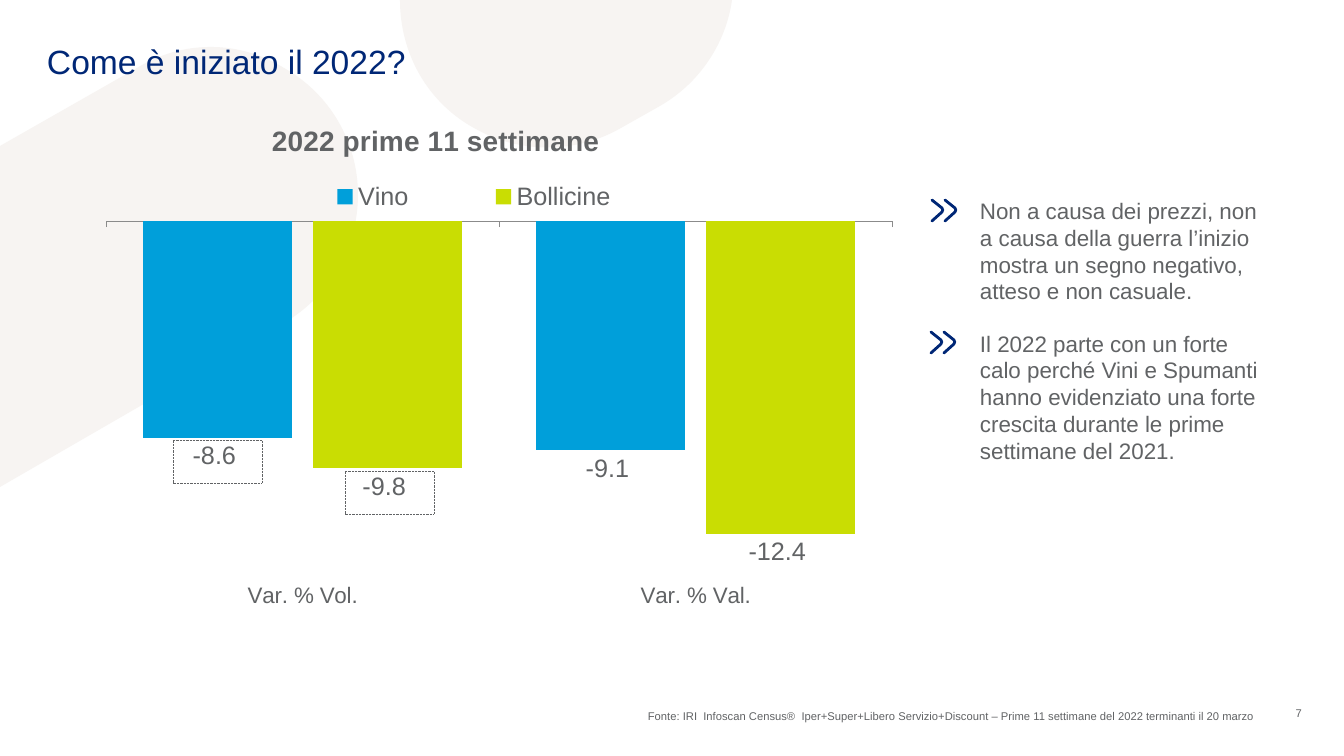
"""Build the slide on how 2022 began for wine and sparkling wine sales."""
import dataclasses

import pptx
import pptx.chart.data
import pptx.dml.color
import pptx.enum.chart
import pptx.enum.dml
import pptx.enum.shapes
import pptx.enum.text
import pptx.oxml
import pptx.oxml.ns
import pptx.util


@dataclasses.dataclass(frozen=True)
class Theme:
    font: str = "Arial"
    navy: str = "002776"
    grey: str = "616365"
    axis: str = "8B8B8B"
    sand: str = "F7F4F2"
    heading: int = 24
    chart_heading: int = 20
    values: int = 18
    body: int = 16
    small: int = 8


THEME = Theme()
HEADING = "Come è iniziato il 2022?"
COMMENTS = [
    "Non a causa dei prezzi, non a causa della guerra l’inizio mostra un segno negativo, "
    "atteso e non casuale.",
    "Il 2022 parte con un forte calo perché Vini e Spumanti hanno evidenziato una forte "
    "crescita durante le prime settimane del 2021.",
]
SOURCE = ("Fonte: IRI  Infoscan Census®  Iper+Super+Libero Servizio+Discount – "
          "Prime 11 settimane del 2022 terminanti il 20 marzo")
PAGE = "7"
CHART_HEADING = "2022 prime 11 settimane"
MEASURES = ["Var. % Vol.", "Var. % Val."]
SALES = [("Vino", (-8.6, -9.1), "009FDA"), ("Bollicine", (-9.8, -12.4), "C9DD03")]
VALUE_FORMAT = "#,##0.0_ ;[Red]\\-#,##0.0\\ "

BLOBS = [
    [(211, 47), (236, 47, 261, 54, 284, 68), (330, 94, 358, 142, 358, 195),
     (358, 247, 330, 296, 284, 323), (0, 487), (0, 146), (137, 68),
     (160, 54, 185, 47, 211, 47)],
    [(400, 0), (732, 0), (726, 43, 700, 83, 660, 106), (621, 128),
     (576, 154, 519, 154, 474, 128), (427, 102, 400, 53, 400, 0)],
]
CHEVRON = [(0, 0), (10, 8), (11, 9, 11, 11, 10, 12), (0, 21)]
CHEVRON_STEP = 13
CHEVRON_PAIRS = [(932, 200), (931, 332)]
VALUE_FRAMES = [(173, 440, 89, 43), (345, 471, 89, 43)]
EMU_PER_PX = 914400 / 100.8


def px(length):
    return pptx.util.Emu(round(length * EMU_PER_PX))


def rgb(colour):
    return pptx.dml.color.RGBColor.from_string(colour)


def style(font, size, colour=THEME.grey, bold=False):
    font.name, font.size, font.bold = THEME.font, pptx.util.Pt(size), bold
    font.color.rgb = rgb(colour)


def draw_outline(slide, contours, dx=0, dy=0, close=False):
    builder = None
    for contour in contours:
        start, *ends = [(px(step[-2] + dx), px(step[-1] + dy)) for step in contour]
        if builder is None:
            builder = slide.shapes.build_freeform(*start, scale=1.0)
        else:
            builder.move_to(*start)
        builder.add_line_segments(ends, close=close)
    outline = builder.convert_to_shape()
    outline.shadow.inherit = False

    steps = [step for contour in contours
             for step in contour[1:] + ([contour[0]] if close and
                                        contour[-1][-2:] != contour[0] else [])]
    segments = list(outline._element.iter(pptx.oxml.ns.qn("a:lnTo")))
    for segment, step in zip(segments, steps):
        if len(step) == 6:
            points = "".join(
                f'<a:pt x="{px(step[i] + dx) - outline.left}" '
                f'y="{px(step[i + 1] + dy) - outline.top}"/>' for i in (0, 2, 4))
            segment.getparent().replace(segment, pptx.oxml.parse_xml(
                f'<a:cubicBezTo {pptx.oxml.ns.nsdecls("a")}>{points}</a:cubicBezTo>'))
    return outline


def fill_frame(shape, box, lines, size, colour=THEME.grey, margins=(0, 0, 0, 0), gap=0,
               align=pptx.enum.text.PP_ALIGN.LEFT,
               anchor=pptx.enum.text.MSO_ANCHOR.TOP, wrap=True):
    shape.left, shape.top, shape.width, shape.height = map(px, box)
    frame = shape.text_frame
    frame.auto_size = pptx.enum.text.MSO_AUTO_SIZE.NONE
    frame.word_wrap, frame.vertical_anchor = wrap, anchor
    (frame.margin_left, frame.margin_top,
     frame.margin_right, frame.margin_bottom) = map(px, margins)
    frame.text = "\n".join(lines)
    for i, paragraph in enumerate(frame.paragraphs):
        paragraph.alignment = align
        paragraph.space_before = pptx.util.Pt(gap if i else 0)
        properties = paragraph._p.get_or_add_pPr()
        properties.set("marL", "0")
        properties.set("indent", "0")
        properties.append(pptx.oxml.parse_xml(
            f'<a:buNone {pptx.oxml.ns.nsdecls("a")}/>'))
        style(paragraph.font, size, colour)


def set_layout(parent, index, target="", **fractions):
    for old in parent.findall(pptx.oxml.ns.qn("c:layout")):
        parent.remove(old)
    modes = '<c:xMode val="edge"/><c:yMode val="edge"/>'
    values = "".join(f'<c:{key} val="{value}"/>' for key, value in fractions.items())
    parent.insert(index, pptx.oxml.parse_xml(
        f'<c:layout {pptx.oxml.ns.nsdecls("c")}><c:manualLayout>{target}{modes}{values}'
        '</c:manualLayout></c:layout>'))


def add_sales_chart(slide):
    kinds = pptx.enum.chart
    data = pptx.chart.data.CategoryChartData()
    data.categories = MEASURES
    for name, values, _ in SALES:
        data.add_series(name, values)
    chart = slide.shapes.add_chart(kinds.XL_CHART_TYPE.COLUMN_CLUSTERED,
                                   *map(px, (47, 118, 846, 543)), data).chart
    style(chart.font, 12)
    heading = chart.chart_title.text_frame
    heading.text = CHART_HEADING
    style(heading.paragraphs[0].font, THEME.chart_heading, bold=True)
    chart.has_legend = True
    chart.legend.position = kinds.XL_LEGEND_POSITION.TOP
    chart.legend.include_in_layout = False
    style(chart.legend.font, THEME.values)

    measures, scale = chart.category_axis, chart.value_axis
    measures.tick_label_position = kinds.XL_TICK_LABEL_POSITION.LOW
    measures.major_tick_mark = kinds.XL_TICK_MARK.OUTSIDE
    measures.format.line.color.rgb = rgb(THEME.axis)
    style(measures.tick_labels.font, THEME.body)
    scale.minimum_scale, scale.maximum_scale = -14, 0
    scale.has_major_gridlines = scale.visible = False

    columns = chart.plots[0]
    columns.gap_width, columns.overlap, columns.vary_by_categories = 50, -14, False
    for series, (_, _, colour) in zip(columns.series, SALES):
        series.invert_if_negative = False
        series.format.fill.solid()
        series.format.fill.fore_color.rgb = rgb(colour)
        labels = series.data_labels
        labels.show_value = True
        labels.position = kinds.XL_LABEL_POSITION.OUTSIDE_END
        labels.number_format, labels.number_format_is_linked = VALUE_FORMAT, False
        style(labels.font, THEME.values)

    set_layout(chart._chartSpace.chart.plotArea, 0, '<c:layoutTarget val="inner"/>',
               x=0.07, y=0.19, w=0.93, h=0.65)
    set_layout(chart.chart_title._element, 1, x=0.26, y=0)
    set_layout(chart.legend._element, 1, x=0.25, y=0.11, w=0.51, h=0.07)


def main():
    deck = pptx.Presentation()
    deck.slide_width, deck.slide_height = px(1344), px(756)
    slide = deck.slides.add_slide(deck.slide_layouts[1])

    blobs = draw_outline(slide, BLOBS, close=True)
    blobs.fill.solid()
    blobs.fill.fore_color.rgb = rgb(THEME.sand)
    blobs.line.fill.background()
    slide.shapes._spTree.insert(2, blobs._element)

    right = pptx.enum.text.PP_ALIGN.RIGHT
    fill_frame(slide.shapes.title, (47, 41, 1250, 70), [HEADING], THEME.heading, THEME.navy)
    fill_frame(slide.placeholders[1], (970, 192, 304, 281), COMMENTS, THEME.body,
               margins=(10, 5, 10, 5), gap=18)
    add_sales_chart(slide)
    fill_frame(slide.shapes.add_textbox(0, 0, 0, 0), (565, 705, 697, 21), [SOURCE],
               THEME.small, margins=(7, 4, 7, 4), align=right)
    fill_frame(slide.shapes.add_textbox(0, 0, 0, 0), (1255, 701, 47, 24), [PAGE],
               THEME.small, margins=(10, 5, 0, 5), align=right,
               anchor=pptx.enum.text.MSO_ANCHOR.MIDDLE, wrap=False)

    for box in VALUE_FRAMES:
        frame = slide.shapes.add_shape(pptx.enum.shapes.MSO_SHAPE.RECTANGLE, *map(px, box))
        frame.shadow.inherit = False
        frame.fill.background()
        frame.line.color.rgb = rgb(THEME.grey)
        frame.line.width = pptx.util.Pt(0.5)
        frame.line.dash_style = pptx.enum.dml.MSO_LINE.ROUND_DOT
    for left, top in CHEVRON_PAIRS:
        for dx in (0, CHEVRON_STEP):
            chevron = draw_outline(slide, [CHEVRON], left + dx, top)
            chevron.fill.background()
            chevron.line.color.rgb = rgb(THEME.navy)
            chevron.line.width = pptx.util.Pt(2)
            chevron.line._get_or_add_ln().set("cap", "rnd")

    deck.save("out.pptx")


if __name__ == "__main__":
    main()
